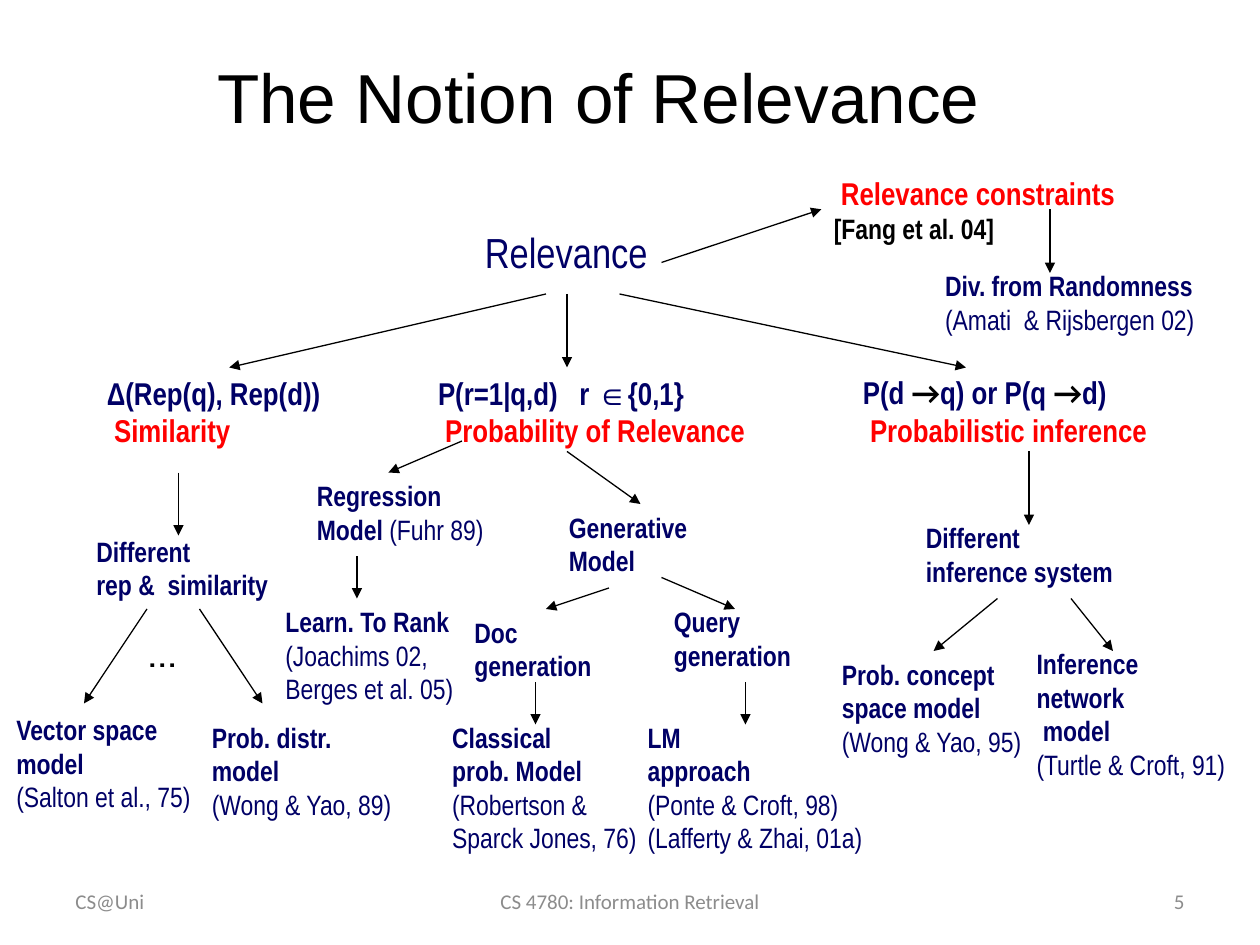
from lxml.etree import SubElement
from pptx import Presentation
from pptx.dml.color import RGBColor
from pptx.enum.shapes import MSO_CONNECTOR
from pptx.enum.text import MSO_ANCHOR, MSO_AUTO_SIZE, PP_ALIGN
from pptx.oxml.ns import qn
from pptx.util import Pt

COLORS = {"black": "000000", "navy": "000066", "red": "FF0000", "gray": "8C8C8C"}
STYLES = {  # font values, colour
    "title": ({"name": "Arial", "size": Pt(39.6)}, "black"),
    "root": ({"name": "Arial Narrow", "size": Pt(24)}, "navy"),
    "formula": ({"name": "Arial Narrow", "size": Pt(18), "bold": True}, "navy"),
    "arrow": ({"name": "Calibri", "size": Pt(18), "bold": True}, "black"),
    "family": ({"name": "Arial Narrow", "size": Pt(18), "bold": True}, "red"),
    "model": ({"name": "Arial Narrow", "size": Pt(16), "bold": True}, "navy"),
    "cite": ({"name": "Arial Narrow", "size": Pt(16)}, "navy"),
    "note": ({"name": "Arial Narrow", "size": Pt(16), "bold": True}, "black"),
    "dots": ({"name": "Cabin", "size": Pt(24)}, "black"),
    "footer": ({"name": "Calibri", "size": Pt(12)}, "gray"),
}

deck = Presentation()
deck.slide_width, deck.slide_height = Pt(720), Pt(540)
page = deck.slides.add_slide(deck.slide_layouts[6])


def add_text(bounds, paras, align=PP_ALIGN.LEFT, **frame_format):
    """Add a text box; each paragraph is a list of (style, text) spans."""
    box = page.shapes.add_textbox(*map(Pt, bounds))
    for name, value in frame_format.items():
        setattr(box.text_frame, name, value)
    for index, spans in enumerate(paras):
        para = box.text_frame.paragraphs[0] if index == 0 else box.text_frame.add_paragraph()
        para.alignment = align
        for style, text in spans:
            span = para.add_run()
            span.text = text
            font_format, color = STYLES[style]
            for name, value in font_format.items():
                setattr(span.font, name, value)
            span.font.color.rgb = RGBColor.from_string(COLORS[color])
    return box


add_text((0, 6, 684, 84), [[("title", "The Notion of Relevance")]], PP_ALIGN.CENTER,
         word_wrap=True, vertical_anchor=MSO_ANCHOR.MIDDLE, margin_top=Pt(17))

for left, width, text, align in [
    (36, 168, "CS@Uni", PP_ALIGN.LEFT),
    (246, 228, "CS 4780: Information Retrieval", PP_ALIGN.CENTER),
    (516, 168, "5", PP_ALIGN.RIGHT),
]:
    add_text((left, 500.4, width, 28.8), [[("footer", text)]], align,
             word_wrap=True, vertical_anchor=MSO_ANCHOR.MIDDLE)

label_format = {"word_wrap": False, "auto_size": MSO_AUTO_SIZE.SHAPE_TO_FIT_TEXT}

# Root, families and the labels with mixed spans
headings = {
    "root": ((270, 126, 108, 36), [[("root", "Relevance")]]),
    "similarity": ((54, 210, 154, 50.4), [
        [("formula", "Δ(Rep(q), Rep(d))")],
        [("family", " Similarity")]]),
    "probability": ((243.2, 210, 190, 50.4), [
        [("formula", "P(r=1|q,d)   r ∈{0,1}")],
        [("family", " Probability of Relevance")]]),
    "inference": ((486, 209.5, 177, 50.4), [
        [("formula", "P(d "), ("arrow", "→"), ("formula", "q) or P(q "),
         ("arrow", "→"), ("formula", "d)")],
        [("family", " Probabilistic inference")]]),
    "constraints": ((469.4, 95.6, 177, 48), [
        [("family", " Relevance constraints")],
        [("note", "[Fang et al. 04]")]]),
    "regression": ((174, 270, 111, 46), [
        [("model", "Regression")],
        [("model", "Model "), ("cite", "(Fuhr 89)")]]),
    "dots": ((78, 354, 38, 36), [[("dots", "…")]]),
}
boxes = {name: add_text(bounds, paras, **label_format)
         for name, (bounds, paras) in headings.items()}

# Models: left, top, width, name lines, citation lines
models = {
    "similarity kinds": (48, 301.7, 116, ["Different", "rep &  similarity"], []),
    "vector space": (2.2, 403.7, 118, ["Vector space", "model"], ["(Salton et al., 75)"]),
    "distribution": (114, 408, 119, ["Prob. distr.", "model"], ["(Wong & Yao, 89)"]),
    "generative": (318, 288, 82, ["Generative", "Model"], []),
    "classical": (251.3, 408, 121, ["Classical", "prob. Model"],
                  ["(Robertson &", "Sparck Jones, 76)"]),
    "doc": (264, 348, 82, ["Doc", "generation"], []),
    "query": (378, 342, 82, ["Query", "generation"], []),
    "language model": (363, 408, 138, ["LM", "approach"],
                       ["(Ponte & Croft, 98)", "(Lafferty & Zhai, 01a)"]),
    "concept": (474, 372, 119, ["Prob. concept", "space model"], ["(Wong & Yao, 95)"]),
    "inference kinds": (522, 294, 125, ["Different", "inference system"], []),
    "network": (585.2, 366, 123, ["Inference", "network", " model"],
                ["(Turtle & Croft, 91)"]),
    "randomness": (533, 150, 158, ["Div. from Randomness"], ["(Amati  & Rijsbergen 02)"]),
    "ranking": (156, 342, 112, ["Learn. To Rank"], ["(Joachims 02,", "Berges et al. 05)"]),
}
for name, (left, top, width, names, cites) in models.items():
    paras = [[("model", text)] for text in names] + [[("cite", text)] for text in cites]
    boxes[name] = add_text((left, top, width, 7.6 + 19.2 * len(paras)), paras, **label_format)

# Arrows: from x, y, to x, y, then the joined box and its side, if any
for x1, y1, x2, y2, *joint in [
    (312, 168, 132, 210, "similarity", 0),
    (324, 168, 324, 210),
    (354, 168, 552, 210),
    (102, 270, 102, 306),
    (84, 348, 48, 402),
    (114, 348, 150, 402),
    (264, 252, 222, 270),
    (324, 258, 366, 288),
    (306, 390, 306, 414),
    (348, 336, 312, 348),
    (378, 330, 420, 348),
    (426, 390, 426, 414),
    (588, 258, 588, 300),
    (570, 342, 534, 372, "concept", 0),
    (612, 342, 636, 372),
    (204, 318, 204, 342),
    (378, 150, 469.4, 119.6, "constraints", 1),
    (600, 119.6, 600, 156),
]:
    arrow = page.shapes.add_connector(MSO_CONNECTOR.STRAIGHT, Pt(x1), Pt(y1), Pt(x2), Pt(y2))
    if joint:
        name, side = joint
        arrow.end_connect(boxes[name], side)
    arrow.line.width = Pt(0.75)
    arrow.line.color.rgb = RGBColor.from_string(COLORS["black"])
    SubElement(arrow.line._get_or_add_ln(), qn("a:tailEnd"), type="triangle")
    SubElement(arrow._element.spPr, qn("a:effectLst"))

deck.save("out.pptx")
